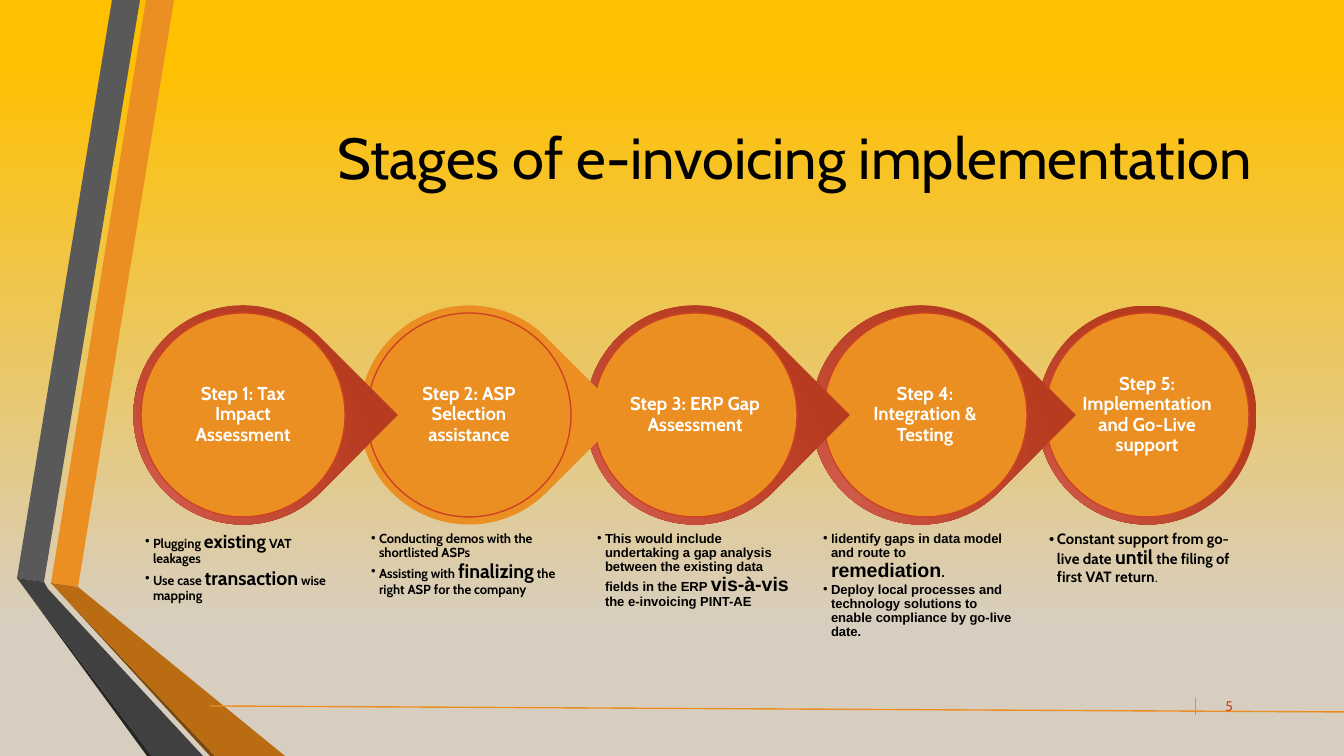
from lxml import etree
from pptx import Presentation
from pptx.dml.color import RGBColor
from pptx.enum.shapes import MSO_CONNECTOR, MSO_SHAPE
from pptx.enum.text import MSO_ANCHOR, PP_ALIGN
from pptx.oxml.ns import qn
from pptx.util import Pt

PX = 9144000 / 1344
CENTER, RIGHT = PP_ALIGN.CENTER, PP_ALIGN.RIGHT
TOP, MIDDLE, BOTTOM = MSO_ANCHOR.TOP, MSO_ANCHOR.MIDDLE, MSO_ANCHOR.BOTTOM
OVAL, TEARDROP = MSO_SHAPE.OVAL, MSO_SHAPE.TEAR
STRAIGHT = MSO_CONNECTOR.STRAIGHT
ORANGE, RED, BLACK, WHITE = "EB8F22", "CD4223", "000000", "FFFFFF"
CABIN, ARIAL = "Cabin", "Arial"
rgb = RGBColor.from_string


def add_gradient(element, fill, stops, shade):
    fill.gradient()
    grad = next(element.iter(qn("a:gradFill")))
    grad.clear()
    grad.set("rotWithShape", "1")
    gs_list = etree.SubElement(grad, qn("a:gsLst"))
    for pos, color in stops:
        gs = etree.SubElement(gs_list, qn("a:gs"), pos=str(pos * 1000))
        etree.SubElement(gs, qn("a:srgbClr"), val=color)
    if shade == "linear":
        etree.SubElement(grad, qn("a:lin"), ang="5400000", scaled="0")
    else:
        focus = etree.SubElement(grad, qn("a:path"), path=shade)
        etree.SubElement(focus, qn("a:fillToRect"), l="50000", t="100000",
                         r="100000", b="50000")


def add_text(box, anchor, insets, paragraphs, color, p_format, bullet=False):
    tb = s.shapes.add_textbox(*[round(v * PX) for v in box])
    tf = tb.text_frame
    frame_format = {"word_wrap": True, "vertical_anchor": anchor}
    for side, inset in zip(("left", "right", "top", "bottom"), insets):
        frame_format["margin_" + side] = round(inset * PX)
    for name, value in frame_format.items():
        setattr(tf, name, value)
    for i, runs in enumerate(paragraphs):
        p = tf.add_paragraph() if i else tf.paragraphs[0]
        if bullet:
            pPr = p._p.get_or_add_pPr()
            pPr.set("marL", str(round(8 * PX)))
            pPr.set("indent", str(round(-8 * PX)))
            etree.SubElement(pPr, qn("a:buFont"), typeface=ARIAL)
            etree.SubElement(pPr, qn("a:buChar"), char="•")
        for name, value in p_format.items():
            setattr(p, name, value)
        for text, size, font, bold in runs:
            r = p.add_run()
            r.text = text
            for name, value in {"size": Pt(size), "name": font, "bold": bold}.items():
                setattr(r.font, name, value)
            r.font.color.rgb = rgb(color)


prs = Presentation()
prs.slide_width, prs.slide_height = round(1344 * PX), round(756 * PX)
s = prs.slides.add_slide(prs.slide_layouts[6])
add_gradient(s._element, s.background.fill,
             [(8, "FFC000"), (83, "D8CEC0"), (100, "D8CEC0")], "linear")

ribbons = [
    (ORANGE, [(51, 583), (78, 587), (174, 0), (146, 0)]),
    ("595959", [(140, 0), (112, 0), (17, 578), (44, 582)]),
    ("262626", [(17, 578), (147, 756), (152, 756)]),
    ("7B480B", [(51, 583), (210, 756), (215, 756)]),
    ("B96C11", [(51, 583), (215, 756), (285, 756), (78, 587)]),
    ("404040", [(203, 756), (48, 589), (44, 582), (17, 578), (152, 756)]),
]
for color, points in ribbons:
    builder = s.shapes.build_freeform(*points[0], scale=PX)
    builder.add_line_segments(points[1:], close=True)
    sp = builder.convert_to_shape()
    sp.shadow.inherit = False
    sp.fill.solid()
    sp.fill.fore_color.rgb = rgb(color)
    sp.line.fill.background()

for ends, width in [((1195, 698, 1195, 715), 0.5), ((210, 706, 1344, 712), 0.75)]:
    line = s.shapes.add_connector(STRAIGHT, *[round(v * PX) for v in ends])
    line.line.color.rgb = rgb(ORANGE)
    line.line.width = Pt(width)
    etree.SubElement(line._element.spPr, qn("a:effectLst"))

add_text((1197, 698, 36, 16), BOTTOM, (0, 0, 0, 0), [[("5", 7.5, CABIN, False)]],
         RED, {"alignment": RIGHT})
add_text((320, 85, 949, 142), MIDDLE, (13, 13, 7, 7),
         [[("Stages of e-invoicing implementation", 31, CABIN, False)]],
         BLACK, {"alignment": CENTER})

steps = [
    ("Step 1: Tax Impact Assessment", [
        [("Plugging ", 7, CABIN, True), ("existing", 10.1, CABIN, True),
         (" VAT leakages", 7, CABIN, True)],
        [("Use case ", 7, CABIN, True), ("transaction", 10.5, CABIN, True),
         (" wise mapping", 7, CABIN, True)]]),
    ("Step 2: ASP Selection assistance", [
        [("Conducting demos with the shortlisted ASPs", 7, CABIN, True)],
        [("Assisting with ", 7, CABIN, True), ("finalizing", 10.5, CABIN, True),
         (" the right ASP for the company", 7, CABIN, True)]]),
    ("Step 3: ERP Gap Assessment", [
        [("This would include undertaking a gap analysis between the existing "
          "data fields in the ERP ", 7, ARIAL, True),
         ("vis-à-vis", 10.5, ARIAL, True),
         (" the e-invoicing PINT-AE", 7, ARIAL, True)]]),
    ("Step 4: Integration & Testing", [
        [("I", 7, CABIN, True),
         ("identify gaps in data model and route to ", 7, ARIAL, True),
         ("remediation", 10.5, ARIAL, True), (".", 7, ARIAL, True)],
        [("Deploy local processes and technology solutions to enable "
          "compliance by go-live date.", 7, ARIAL, True)]]),
    ("Step 5: Implementation and Go-Live support", [
        [("Constant support from go-live date ", 8, CABIN, True),
         ("until", 10.5, CABIN, True),
         (" the filing of first VAT return", 8, CABIN, True),
         (".", 8, CABIN, False)]]),
]
FIRST_X, PITCH, CENTER_Y = 243, 226, 415
OUTER, INNER, LABEL = 219, 204, 145

for i, (title, details) in reversed(list(enumerate(steps))):
    cx = FIRST_X + i * PITCH
    inner_cx = cx + 4 if i == 3 else cx
    last = i == len(steps) - 1
    for kind, x, size in [(OVAL if last else TEARDROP, cx, OUTER),
                          (OVAL, inner_cx, INNER)]:
        box = (x - size / 2, CENTER_Y - size / 2, size, size)
        sp = s.shapes.add_shape(kind, *[round(v * PX) for v in box])
        sp.shadow.inherit = False
        if kind == TEARDROP:
            sp.rotation = 45
        if size == OUTER and i != 1:
            add_gradient(sp._element, sp.fill, [(0, "D05A4A"), (100, "B63B1F")], "circle")
        else:
            sp.fill.solid()
            sp.fill.fore_color.rgb = rgb(ORANGE)
        if size == OUTER:
            sp.line.fill.background()
        else:
            sp.line.color.rgb = rgb(RED)
            sp.line.width = Pt(0.75)
    add_text((inner_cx - LABEL / 2, CENTER_Y - LABEL / 2, LABEL, LABEL), MIDDLE,
             (1, 1, 1, 1), [[(title, 10, CABIN, True)]], WHITE,
             {"alignment": CENTER, "line_spacing": 0.9})
    add_text((cx - INNER / 2, 528, INNER, 120), TOP, (4, 4, 4, 4), details, BLACK,
             {"level": 1, "line_spacing": 0.9, "space_after": Pt(1)}, bullet=True)

prs.save("out.pptx")
